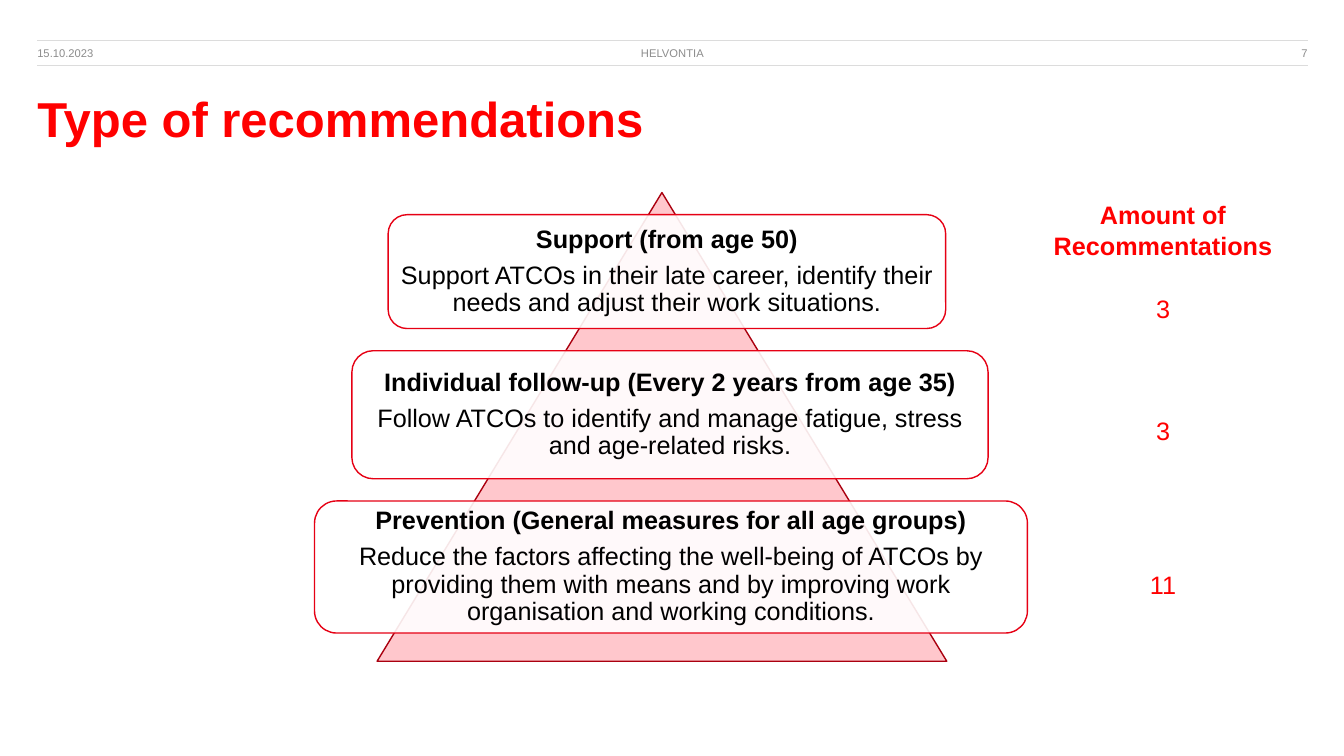
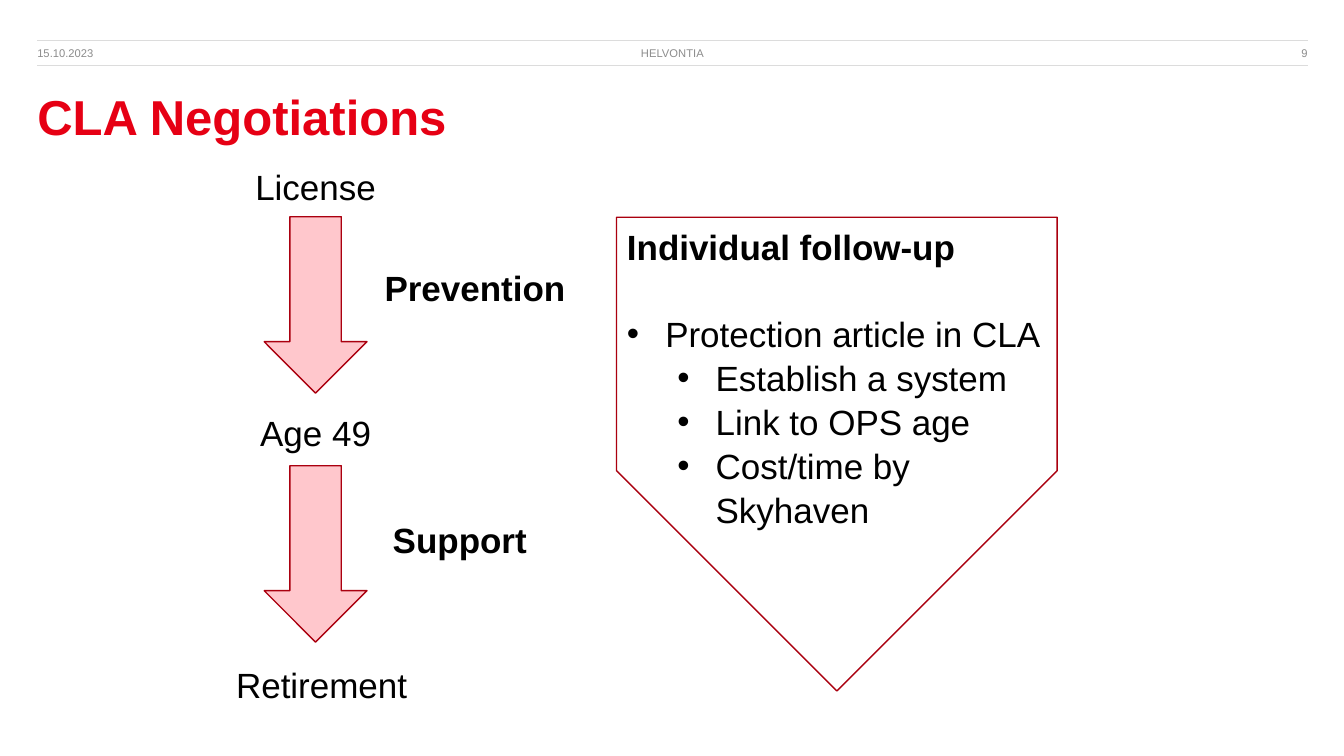
"""Builds two slides on recommendation types and CLA negotiations."""
from lxml import etree
from pptx import Presentation
from pptx import util as u
from pptx.dml.color import RGBColor
from pptx.enum import shapes, text
from pptx.oxml.ns import qn

THEME = {
    "font": "Arial",
    "black": "000000", "white": "FFFFFF", "red": "FF0000", "brand": "E60014",
    "dark": "AA000F", "pink": "FFC7CC", "grey": "8C8C8C", "rule": "DCDCDC",
    "title": 35, "large": 25, "body": 18, "small": 8,
    "body_line": 1.05, "tight_line": 0.9,
}
PX = 9144
SLIDE = (1333, 750)
MARGIN, CONTENT_WIDTH = 37, 1260
HEADER_TOP, HEADER_HEIGHT = 40, 25
HEADER_FIELD_WIDTH = 406

LEFT, CENTER, RIGHT = text.PP_ALIGN.LEFT, text.PP_ALIGN.CENTER, text.PP_ALIGN.RIGHT
TOP, MIDDLE = text.MSO_ANCHOR.TOP, text.MSO_ANCHOR.MIDDLE
KIND = shapes.MSO_SHAPE

DATE, ORGANISATION = "15.10.2023", "HELVONTIA"

RECOMMENDATIONS = {"title": "Type of recommendations", "color": "red", "top": 94, "page": "7"}
PYRAMID = (374, 191, 565, 465)
TIER_TOP, TIER_GAP = 213, 22
TIERS = [
    (385, 553, 113, "Support (from age 50)",
     "Support ATCOs in their late career, identify their needs and adjust their work situations."),
    (349, 631, 127, "Individual follow-up (Every 2 years from age 35)",
     "Follow ATCOs to identify and manage fatigue, stress and age-related risks."),
    (312, 707, 131, "Prevention (General measures for all age groups)",
     "Reduce the factors affecting the well-being of ATCOs by providing them with means "
     "and by improving work organisation and working conditions."),
]
AMOUNTS_BOX = (1030, 191, 247, 404)
AMOUNTS_HEADING = "Amount of Recommentations"
AMOUNTS = [("3", 1), ("3", 3), ("11", 4)]
AMOUNT_LINE = 21.7

NEGOTIATIONS = {"title": "CLA Negotiations", "color": "brand", "top": 92, "page": "9"}
LABEL_SIZE = (286, 52)
CAREER_LABELS = [
    ("License", 170, 157, False),
    ("Prevention", 328, 257, True),
    ("Age 49", 170, 401, False),
    ("Support", 313, 507, True),
    ("Retirement", 176, 651, False),
]
CAREER_ARROWS = [(262, top, 102, 175) for top in (215, 462)]
FOLLOW_UP_PLATE = (595, 232, 470, 437)
FOLLOW_UP_BOX = (612, 217, 437, 305)
FOLLOW_UP_HEADING = "Individual follow-up"
FOLLOW_UP_POINTS = [
    (0, "Protection article in CLA"),
    (1, "Establish a system"),
    (1, "Link to OPS age"),
    (1, "Cost/time by Skyhaven"),
]
BULLET_INDENTS, BULLET_HANG = (38, 88), 38
FOLLOW_UP_SPACE = 30.2


def rgb(color):
    return RGBColor.from_string(THEME[color])


def emu(lengths):
    return [length * PX for length in lengths]


def assign(target, values):
    for name, value in values.items():
        setattr(target, name, value)


def add_bullet(paragraph, level):
    properties = paragraph._p.get_or_add_pPr()
    properties.set("marL", str(BULLET_INDENTS[level] * PX))
    properties.set("indent", str(-BULLET_HANG * PX))
    etree.SubElement(properties, qn("a:buFont")).set("typeface", THEME["font"])
    etree.SubElement(properties, qn("a:buChar")).set("char", "•")
    paragraph.level = level


def write(frame, paragraphs, size, color="black", align=LEFT, line="body_line",
          insets=(10, 5, 10, 5), anchor=TOP):
    sides = ("margin_left", "margin_top", "margin_right", "margin_bottom")
    assign(frame, {"word_wrap": True, "vertical_anchor": anchor, **dict(zip(sides, emu(insets)))})
    for index, (words, form) in enumerate(paragraphs):
        paragraph = frame.paragraphs[0] if index == 0 else frame.add_paragraph()
        if "level" in form:
            add_bullet(paragraph, form["level"])
        spacing = {name: u.Pt(form[name]) for name in ("space_before", "space_after") if name in form}
        assign(paragraph, {"alignment": align, "line_spacing": THEME[line], **spacing})
        run = paragraph.add_run()
        run.text = words
        assign(run.font, {"name": THEME["font"], "size": u.Pt(THEME[size]),
                          "bold": form.get("bold", False)})
        run.font.color.rgb = rgb(color)


def add_text(slide, box, paragraphs, size, **form):
    write(slide.shapes.add_textbox(*emu(box)).text_frame, paragraphs, size, **form)


def add_figure(slide, kind, box, fill=None, outline="dark"):
    figure = slide.shapes.add_shape(kind, *emu(box))
    figure.shadow.inherit = False
    if fill:
        figure.fill.solid()
        figure.fill.fore_color.rgb = rgb(fill)
    else:
        figure.fill.background()
    figure.line.color.rgb = rgb(outline)
    figure.line.width = u.Pt(1)
    return figure


def set_opacity(figure, percent):
    color = figure._element.spPr.find(qn("a:solidFill"))[0]
    etree.SubElement(color, qn("a:alpha")).set("val", str(percent * 1000))


def add_rule(slide, top):
    rule = slide.shapes.add_connector(
        shapes.MSO_CONNECTOR.STRAIGHT, *emu((MARGIN, top, MARGIN + CONTENT_WIDTH, top)))
    rule.line.color.rgb = rgb("rule")
    rule.line.width = u.Pt(0.5)
    etree.SubElement(rule._element.spPr, qn("a:effectLst"))


def start_slide(deck, heading):
    slide = deck.slides.add_slide(deck.slide_layouts[6])
    for top in (HEADER_TOP, HEADER_TOP + HEADER_HEIGHT):
        add_rule(slide, top)
    step = (CONTENT_WIDTH - HEADER_FIELD_WIDTH) // 2
    fields = [(DATE, LEFT), (ORGANISATION, CENTER), (heading["page"], RIGHT)]
    for index, (words, align) in enumerate(fields):
        box = (MARGIN + index * step, HEADER_TOP, HEADER_FIELD_WIDTH, HEADER_HEIGHT)
        add_text(slide, box, [(words, {})], "small", color="grey", align=align,
                 insets=(0, 0, 0, 0), anchor=MIDDLE)
    add_text(slide, (MARGIN, heading["top"], CONTENT_WIDTH, 54),
             [(heading["title"], {"bold": True})], "title", color=heading["color"],
             line="tight_line", insets=(0, 0, 0, 0))
    return slide


def build_recommendations(deck):
    slide = start_slide(deck, RECOMMENDATIONS)
    add_figure(slide, KIND.ISOSCELES_TRIANGLE, PYRAMID, "pink")
    top = TIER_TOP
    for left, width, height, heading, detail in TIERS:
        tier = add_figure(slide, KIND.ROUNDED_RECTANGLE, (left, top, width, height), "white", "brand")
        set_opacity(tier, 90)
        write(tier.text_frame,
              [(heading, {"bold": True, "space_after": 6.3}), (detail, {"space_after": 6.3})],
              "body", align=CENTER, line="tight_line", insets=(7, 7, 7, 7), anchor=MIDDLE)
        top += height + TIER_GAP
    amounts = [(AMOUNTS_HEADING, {"bold": True})]
    amounts += [(amount, {"space_before": gap * AMOUNT_LINE}) for amount, gap in AMOUNTS]
    add_text(slide, AMOUNTS_BOX, amounts, "body", color="red", align=CENTER)


def build_negotiations(deck):
    slide = start_slide(deck, NEGOTIATIONS)
    for arrow in CAREER_ARROWS:
        add_figure(slide, KIND.DOWN_ARROW, arrow, "pink")
    for label, left, top, bold in CAREER_LABELS:
        add_text(slide, (left, top, *LABEL_SIZE), [(label, {"bold": bold})], "large", align=CENTER)
    add_figure(slide, KIND.PENTAGON, FOLLOW_UP_PLATE).rotation = 90
    points = [(words, {"level": level}) for level, words in FOLLOW_UP_POINTS]
    points[0][1]["space_before"] = FOLLOW_UP_SPACE
    add_text(slide, FOLLOW_UP_BOX, [(FOLLOW_UP_HEADING, {"bold": True}), *points], "large")


def main():
    deck = Presentation()
    assign(deck, dict(zip(("slide_width", "slide_height"), emu(SLIDE))))
    build_recommendations(deck)
    build_negotiations(deck)
    deck.save("out.pptx")


if __name__ == "__main__":
    main()
